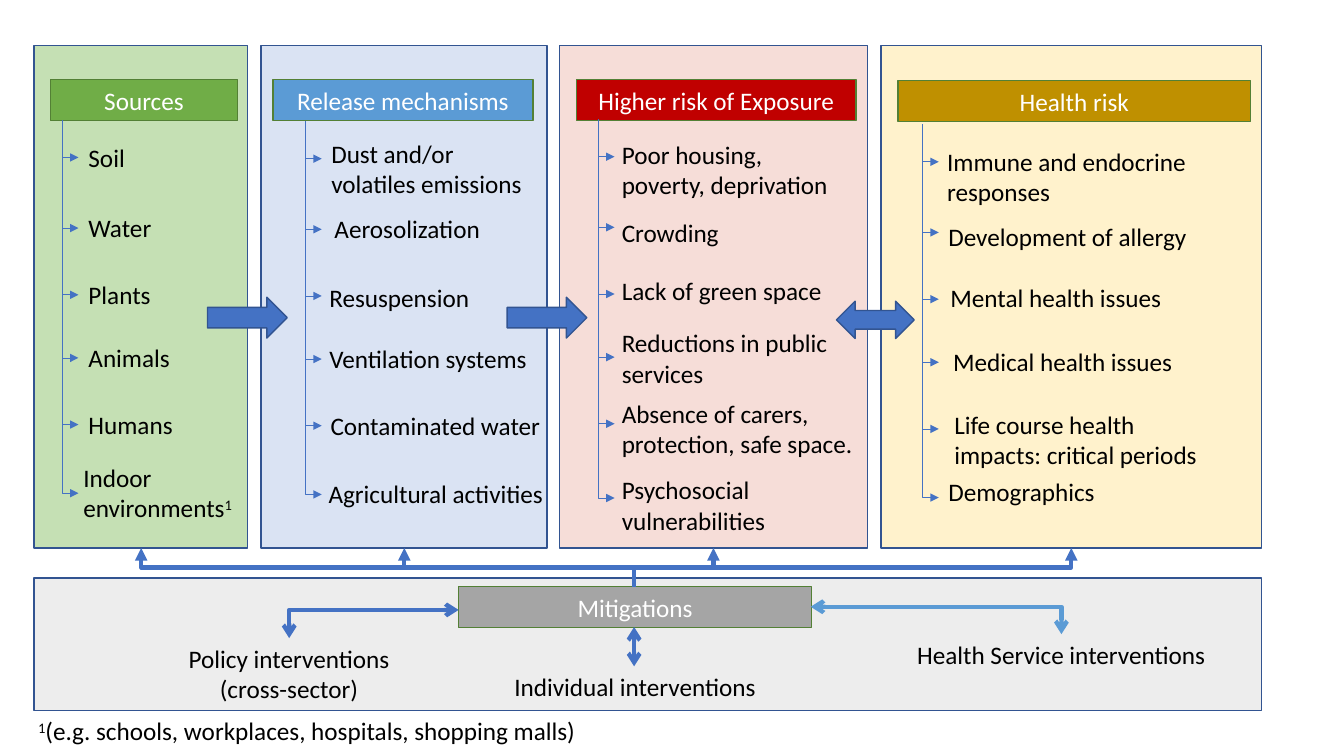
"""Build a slide on sources, release, exposure and health risk, with mitigations below."""
from lxml import etree
from pptx import Presentation
from pptx import util as u
from pptx.dml.color import RGBColor
from pptx.enum import shapes, text
from pptx.oxml import ns

WHITE = RGBColor(0xFF, 0xFF, 0xFF)
BLACK = RGBColor(0x00, 0x00, 0x00)
BLUE = RGBColor(0x44, 0x72, 0xC4)
LIGHT_BLUE = RGBColor(0x5B, 0x9B, 0xD5)
NAVY = RGBColor(0x32, 0x54, 0x91)
DARK_GREEN = RGBColor(0x53, 0x80, 0x35)
GREEN = RGBColor(0x70, 0xAD, 0x47)
RED = RGBColor(0xC0, 0x00, 0x00)
GOLD = RGBColor(0xBF, 0x90, 0x00)
GREY = RGBColor(0xA5, 0xA5, 0xA5)
PALE_GREEN = RGBColor(0xC5, 0xE0, 0xB4)
PALE_BLUE = RGBColor(0xDA, 0xE3, 0xF3)
PALE_RED = RGBColor(0xF6, 0xDD, 0xD8)
PALE_GOLD = RGBColor(0xFF, 0xF2, 0xCC)
PALE_GREY = RGBColor(0xED, 0xED, 0xED)

SHAPE = shapes.MSO_SHAPE
LEFT, CENTER = text.PP_ALIGN.LEFT, text.PP_ALIGN.CENTER
ONE_LINE, TWO_LINES = 1.03, 1.8

deck = Presentation()
deck.slide_width, deck.slide_height = u.Cm(33.87), u.Cm(19.05)
page = deck.slides.add_slide(deck.slide_layouts[6])


def add_box(words, left, top, width, height, *, kind=SHAPE.RECTANGLE, fill=None,
            line=NAVY, color=BLACK, align=LEFT):
    """Add a filled shape, or a plain text box when there is no fill."""
    frame = [u.Cm(length) for length in (left, top, width, height)]
    if fill is None:
        box = page.shapes.add_textbox(*frame)
    else:
        box = page.shapes.add_shape(kind, *frame)
        box.shadow.inherit = False
        box.fill.solid()
        box.fill.fore_color.rgb = fill
        box.line.color.rgb = line
        box.line.width = u.Pt(1)
    box.text_frame.word_wrap = True
    for number, row in enumerate(words.split("\n")):
        para = box.text_frame.paragraphs[0] if number == 0 else box.text_frame.add_paragraph()
        para.alignment = align
        for piece in filter(None, row.partition("¹")):
            span = para.add_run()
            span.text = piece.replace("¹", "1")
            span.font.name, span.font.size = "Calibri", u.Pt(18)
            span.font.color.rgb = color
            if piece == "¹":
                span.font._element.set("baseline", "30000")


def add_line(x1, y1, x2, y2, *, color=BLUE, weight=3, head=None, tail=None):
    """Add a straight line, or an elbow that leaves its start horizontally."""
    link = page.shapes.add_connector(
        shapes.MSO_CONNECTOR.STRAIGHT if x1 == x2 else shapes.MSO_CONNECTOR.ELBOW,
        u.Cm(x1), u.Cm(y1), u.Cm(x2), u.Cm(y2))
    link.line.color.rgb = color
    link.line.width = u.Pt(weight)
    properties = link._element.spPr
    if x1 != x2:
        properties.find(ns.qn("a:prstGeom")).set("prst", "bentConnector2")
    for end, style in (("a:headEnd", head), ("a:tailEnd", tail)):
        if style:
            etree.SubElement(link.line._get_or_add_ln(), ns.qn(end), type=style)
    etree.SubElement(properties, ns.qn("a:effectLst"))


PANEL_TOP, PANEL_HEIGHT = 1.14, 12.67
BRANCH_DROPS = (0.95, 2.73, 4.41, 6.0, 7.68, 9.41)
BRANCH_LENGTH = 0.41

# panel left, width, fill; header left, top, width, fill; trunk x, top, extra last drop
columns = [
    ("Sources", (0.86, 5.38, PALE_GREEN), (1.27, 2.01, 4.72, GREEN), (1.57, 3.02, 0), [
        ("Soil", 1.98, 3.45, 2.39, ONE_LINE),
        ("Water", 1.98, 5.23, 2.39, ONE_LINE),
        ("Plants", 1.98, 6.91, 2.39, ONE_LINE),
        ("Animals", 1.98, 8.51, 2.84, ONE_LINE),
        ("Humans", 1.98, 10.19, 2.84, ONE_LINE),
        ("Indoor environments¹", 1.85, 11.53, 5.87, TWO_LINES)]),
    ("Release mechanisms", (6.58, 7.21, PALE_BLUE), (6.88, 2.01, 6.55, LIGHT_BLUE),
     (7.7, 3.05, 0), [
        ("Dust and/or volatiles emissions", 8.1, 3.35, 5.46, TWO_LINES),
        ("Aerosolization", 8.18, 5.26, 6.1, ONE_LINE),
        ("Resuspension", 8.05, 6.99, 4.27, ONE_LINE),
        ("Ventilation systems", 8.05, 8.53, 6.1, ONE_LINE),
        ("Contaminated water", 8.08, 10.21, 6.1, ONE_LINE),
        ("Agricultural activities", 8.03, 11.94, 6.1, ONE_LINE)]),
    ("Higher risk of Exposure", (14.1, 7.77, PALE_RED), (14.53, 2.01, 7.04, RED),
     (15.08, 3.0, 0.14), [
        ("Poor housing, poverty, deprivation", 15.42, 3.38, 5.87, TWO_LINES),
        ("Crowding", 15.42, 5.36, 4.52, ONE_LINE),
        ("Lack of green space", 15.42, 6.81, 5.77, ONE_LINE),
        ("Reductions in public services", 15.42, 8.13, 7.87, TWO_LINES),
        ("Absence of carers, protection, safe space.", 15.42, 9.91, 6.32, TWO_LINES),
        ("Psychosocial vulnerabilities", 15.42, 11.84, 5.77, TWO_LINES)]),
    ("Health risk", (22.2, 9.6, PALE_GOLD), (22.63, 2.03, 8.89, GOLD), (23.25, 3.13, 0), [
        ("Immune and endocrine responses", 23.62, 3.56, 9.09, TWO_LINES),
        ("Development of allergy", 23.65, 5.44, 7.32, ONE_LINE),
        ("Mental health issues", 23.7, 6.99, 6.73, ONE_LINE),
        ("Medical health issues", 23.77, 8.61, 6.65, ONE_LINE),
        ("Life course health impacts: critical periods", 23.8, 10.19, 7.11, TWO_LINES),
        ("Demographics", 23.65, 11.89, 4.8, ONE_LINE)]),
]

for title, panel, header, trunk, items in columns:
    panel_left, panel_width, panel_fill = panel
    header_left, header_top, header_width, header_fill = header
    trunk_x, trunk_top, last_extra = trunk
    add_box("", panel_left, PANEL_TOP, panel_width, PANEL_HEIGHT, fill=panel_fill)
    add_box(title, header_left, header_top, header_width, ONE_LINE, fill=header_fill,
            line=DARK_GREEN, color=WHITE, align=CENTER)
    for drop, item in zip(BRANCH_DROPS, items):
        extra = last_extra if drop == BRANCH_DROPS[-1] else 0
        add_line(trunk_x + BRANCH_LENGTH, trunk_top + drop + extra, trunk_x, trunk_top,
                 weight=0.5, head="triangle")
        add_box(*item)

for kind, left, top, width, height in (
        (SHAPE.RIGHT_ARROW, 5.23, 7.49, 2.01, 1.03),
        (SHAPE.RIGHT_ARROW, 12.78, 7.49, 2.01, 1.03),
        (SHAPE.LEFT_RIGHT_ARROW, 21.08, 7.59, 1.96, 0.94)):
    add_box("", left, top, width, height, kind=kind, fill=BLUE)

add_box("", 0.86, 14.57, 30.94, 3.33, fill=PALE_GREY)
add_box("Mitigations", 11.56, 14.78, 8.89, ONE_LINE, fill=GREY, line=DARK_GREEN,
        color=WHITE, align=CENTER)
for words, left, top, height in (
        ("Policy interventions\n(cross-sector)", 2.84, 16.08, TWO_LINES),
        ("Health Service interventions", 22.3, 15.98, ONE_LINE),
        ("Individual interventions", 11.56, 16.79, ONE_LINE)):
    add_box(words, left, top, 8.89, height, align=CENTER)
add_box("¹(e.g. schools, workplaces, hospitals, shopping malls)", 0.71, 17.91, 16.94, ONE_LINE)

STEM_X, STEM_TOP = 15.98, 14.3
add_line(11.56, 15.37, 7.29, 16.08, head="arrow", tail="arrow")
add_line(20.43, 15.29, 26.75, 15.98, color=LIGHT_BLUE, head="arrow", tail="arrow")
add_line(STEM_X, 16.79, STEM_X, 15.8, head="arrow", tail="arrow")
add_line(STEM_X, 14.78, STEM_X, STEM_TOP)
for panel_x in (3.56, 10.19, 17.98, 27.0):
    add_line(STEM_X, STEM_TOP, panel_x, PANEL_TOP + PANEL_HEIGHT, tail="triangle")

deck.save("out.pptx")
